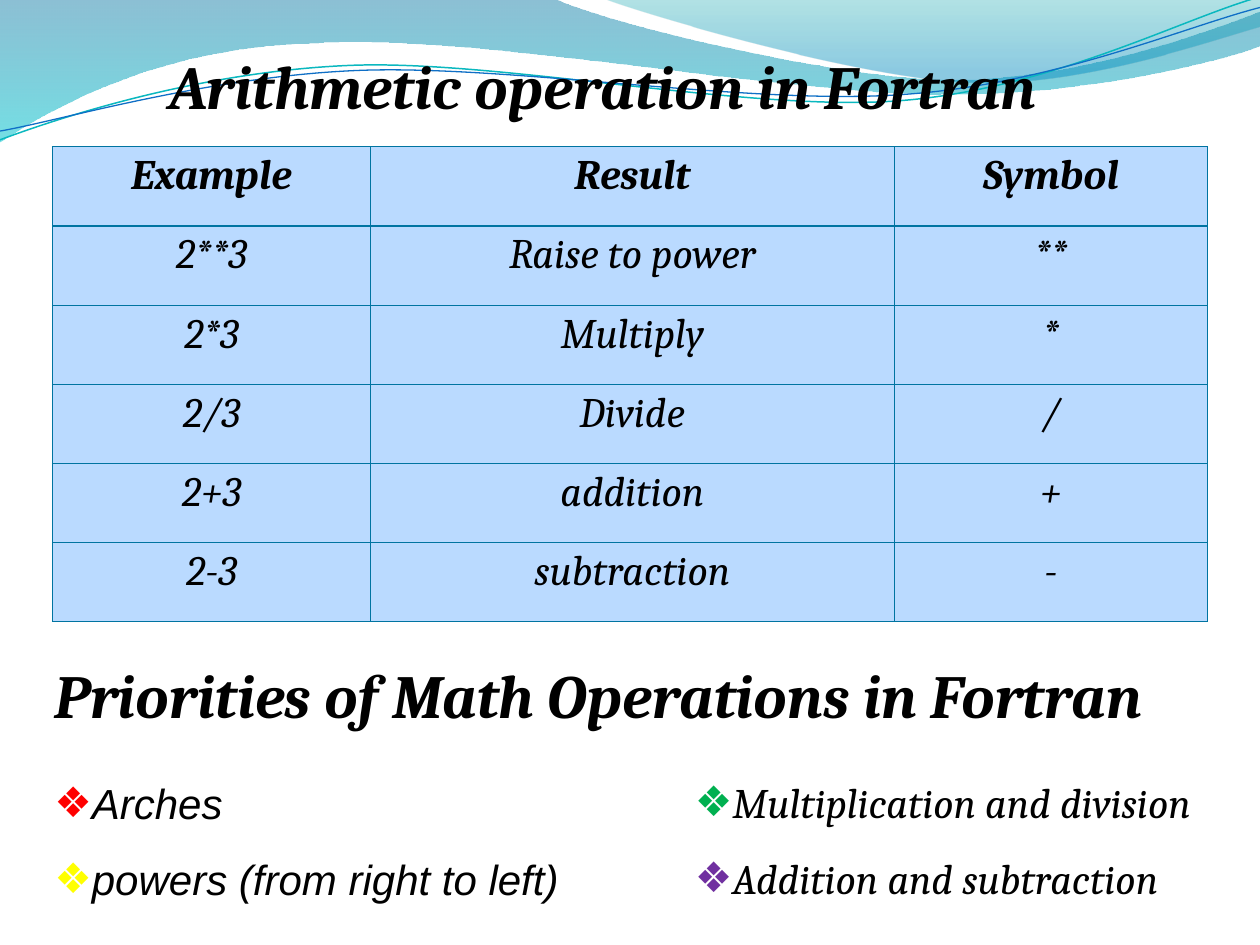
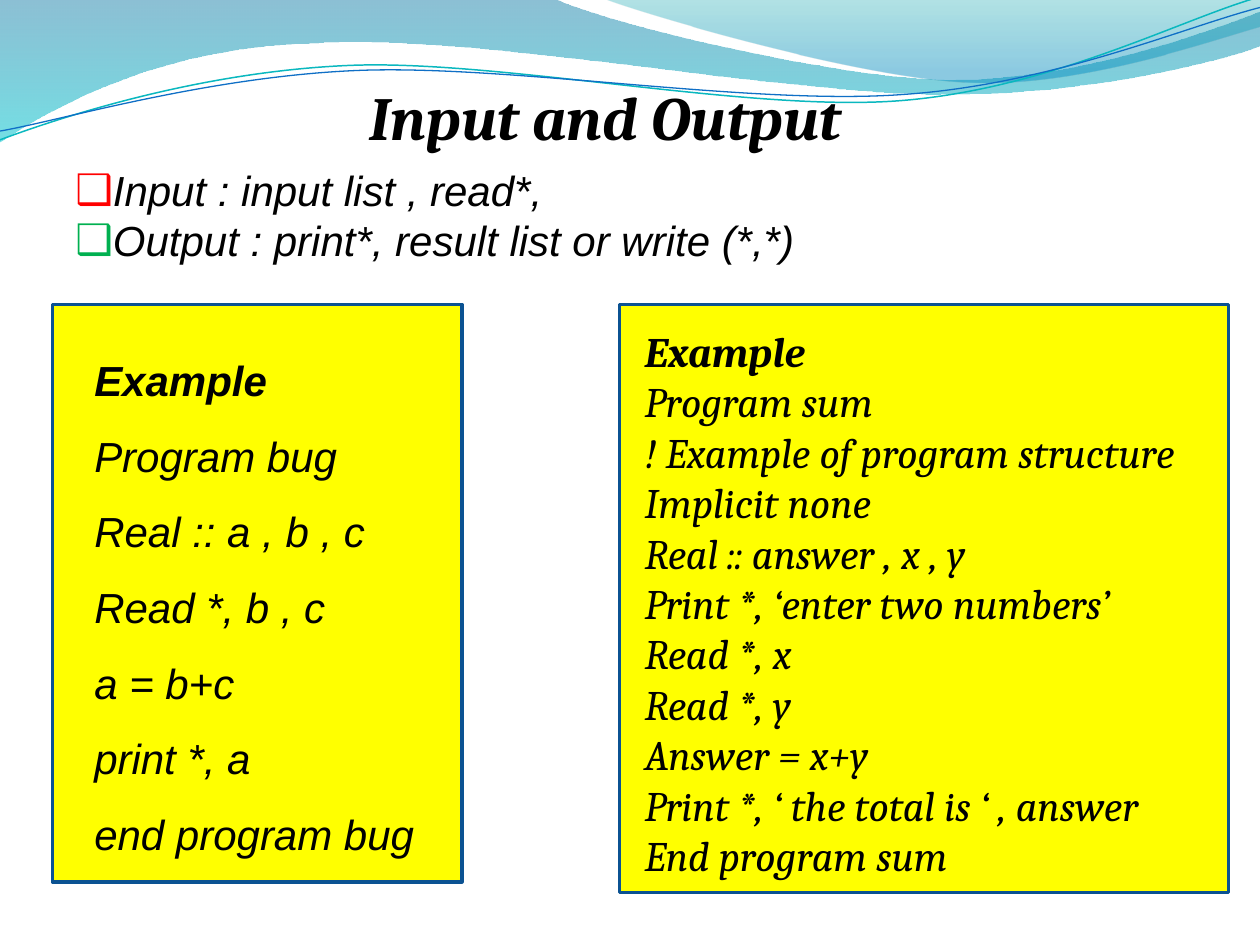
import math

import pptx
import pptx.dml.color
import pptx.enum.shapes
import pptx.enum.text
import pptx.oxml
import pptx.oxml.ns
import pptx.util
from lxml import etree

Pt = pptx.util.Pt
qn = pptx.oxml.ns.qn
ANCHOR = pptx.enum.text.MSO_ANCHOR

# Shared look
BLACK, YELLOW, RED, GREEN, PURPLE = "000000", "FFFF00", "FF0000", "00B050", "7030A0"
CELL_FILL, GRID_LINE, PANEL_LINE = "BADAFF", "0074A1", "0B5292"
SERIF, SANS = "Cambria", "Arial"
TITLE_SIZE, BODY_SIZE = 35, 24
LINE_TILT = -2.7

# Header outlines: a pair is a straight segment, a triple of pairs is a curve
WIDE_BAND = [
    (0, 0), (316.8, -0.7),
    ((342.7, 12.2), (478.1, 45.4), (545.8, 45.4)),
    ((614.2, 45.4), (689.8, 18.7), (720, 6.5)),
    (720.7, 25.9),
    ((707.8, 31.7), (626.4, 54.7), (537.1, 54)),
    ((447.8, 54), (275, 20.2), (185, 24.5)),
    ((92.9, 25.9), (33.1, 59.8), (-0.7, 81.4)),
    (0, 0),
]
RIGHT_BAND = [
    (344.9, -0.7),
    ((366.5, 7.9), (491, 44.6), (553.7, 46.8)),
    ((616.3, 49.7), (691.9, 23), (720, 15.1)),
    (720, 0), (344.9, -0.7),
]
TEAL_LINE = [
    (0, 79.9),
    ((34.6, 67), (113.8, 41), (199.4, 37.4)),
    ((284.4, 33.8), (427, 64.1), (513.4, 57.6)),
    ((599.8, 51.1), (675.4, 10.8), (718.6, -1.4)),
]
BLUE_LINE = [
    (0, 74.9),
    ((33.8, 69.1), (118.1, 43.9), (203.8, 40.3)),
    ((290.2, 36.7), (429.8, 60.5), (516.2, 54)),
    ((601.9, 48.2), (677.5, 15.1), (720, 4.3)),
]
# Outline and gradient stops (position, colour, opacity in percent)
BANDS = [
    (WIDE_BAND, [(0, "0074A1", 45), (1, "00C6CF", 55)]),
    (RIGHT_BAND, [(0, "00A1A9", 30), (0.8, "008BBF", 45)]),
]
# Outline, centre of its tilted box, colour and width
LINES = [
    (TEAL_LINE, (359.3, 41.4), "0AB8BF", 0.85),
    (BLUE_LINE, (359.6, 42.5), "0F6FC6", 0.75),
]

OPERATIONS = [
    ("Example", "Result", "Symbol"),
    ("2**3", "Raise to power", "**"),
    ("2*3", "Multiply", "*"),
    ("2/3", "Divide", "/"),
    ("2+3", "addition", "+"),
    ("2-3", "subtraction", "-"),
]
BUG_PROGRAM = [
    "Example", "Program bug", "Real :: a , b , c", "Read *, b , c",
    "a = b+c", "print *, a", "end program bug",
]
SUM_PROGRAM = [
    "Example", "Program sum", "! Example of program structure", "Implicit none",
    "Real :: answer , x , y", "Print *, ‘enter two numbers’", "Read *, x", "Read *, y",
    "Answer = x+y", "Print *, ‘ the total is ‘ , answer", "End program sum",
]


def color(value):
    return pptx.dml.color.RGBColor.from_string(value)


def style(para, font, size=BODY_SIZE, bold=False):
    para.font.name = font
    para.font.size = Pt(size)
    para.font.bold = bold
    para.font.italic = True
    para.font.color.rgb = color(BLACK)


# Header waves
def turn(point, center, degrees):
    angle = math.radians(degrees)
    across, down = point[0] - center[0], point[1] - center[1]
    return (center[0] + across * math.cos(angle) - down * math.sin(angle),
            center[1] + across * math.sin(angle) + down * math.cos(angle))


def add_outline(page, outline, center=(0, 0), tilt=0):
    segments = [part if len(part) == 3 else (part,) for part in outline]
    points = [turn(point, center, -tilt) for segment in segments for point in segment]
    points = [(Pt(x), Pt(y)) for x, y in points]
    builder = page.shapes.build_freeform(*points[0])
    builder.add_line_segments(points[1:], close=outline[0] == outline[-1])
    shape = builder.convert_to_shape()
    shape.shadow.inherit = False
    shape.rotation = tilt
    # Join each three control points into one curve
    steps = iter(list(shape.element.iter(qn("a:lnTo"))))
    for segment in segments[1:]:
        corners = [next(steps) for _ in segment]
        if len(corners) == 3:
            curve = etree.Element(qn("a:cubicBezTo"))
            corners[0].addprevious(curve)
            for corner in corners:
                curve.append(corner[0])
                corner.getparent().remove(corner)
    return shape


def add_waves(page):
    for outline, stops in BANDS:
        band = add_outline(page, outline)
        band.line.fill.background()
        band.fill.gradient()
        band.fill.gradient_angle = 270
        for stop, (position, value, _) in zip(band.fill.gradient_stops, stops):
            stop.position = position
            stop.color.rgb = color(value)
        for tint, (_, _, opacity) in zip(band.element.spPr.iter(qn("a:srgbClr")), stops):
            etree.SubElement(tint, qn("a:alpha"), val=str(opacity * 1000))
    for outline, center, value, width in LINES:
        wave = add_outline(page, outline, center, LINE_TILT)
        wave.fill.background()
        wave.line.color.rgb = color(value)
        wave.line.width = Pt(width)


# Text
def add_text(page, box, lines, font, size=BODY_SIZE, spacing=1, bold_first=False,
             anchor=ANCHOR.TOP, wrap=False):
    frame = page.shapes.add_textbox(*map(Pt, box)).text_frame
    frame.word_wrap = wrap
    frame.auto_size = pptx.enum.text.MSO_AUTO_SIZE.SHAPE_TO_FIT_TEXT
    frame.vertical_anchor = anchor
    for index, line in enumerate(lines):
        para = frame.add_paragraph() if index else frame.paragraphs[0]
        para.text = line
        para.line_spacing = float(spacing)
        style(para, font, size, bold_first and index == 0)
    return frame


def add_title(page, box, title):
    add_text(page, box, [title], SERIF, TITLE_SIZE, bold_first=True)


def add_bullets(page, box, symbol, items, font, left=0, **options):
    frame = add_text(page, box, [line for line, _ in items], font, **options)
    for para, (_, value) in zip(frame.paragraphs, items):
        properties = para._p.get_or_add_pPr()
        properties.set("marL", str(Pt(left)))
        properties.set("indent", "0")
        tint = etree.Element(qn("a:buClr"))
        etree.SubElement(tint, qn("a:srgbClr"), val=value)
        typeface = etree.Element(qn("a:buFont"), typeface=SANS)
        mark = etree.Element(qn("a:buChar"), char=symbol)
        # Bullet settings come after the spacing and before the font
        place = properties.find(qn("a:defRPr"))
        for part in (tint, typeface, mark):
            place.addprevious(part)


# Table of operators
def add_borders(cell):
    properties = cell._tc.get_or_add_tcPr()
    for index, side in enumerate(("lnL", "lnR", "lnT", "lnB")):
        border = etree.Element(qn("a:" + side), w=str(Pt(0.75)))
        fill = etree.SubElement(border, qn("a:solidFill"))
        etree.SubElement(fill, qn("a:srgbClr"), val=GRID_LINE)
        properties.insert(index, border)


def add_operations(page, box, column_widths):
    grid = page.shapes.add_table(len(OPERATIONS), len(column_widths), *map(Pt, box)).table
    grid.horz_banding = False
    for column, width in zip(grid.columns, column_widths):
        column.width = Pt(width)
    for row_index, texts in enumerate(OPERATIONS):
        grid.rows[row_index].height = Pt(box[3] / len(OPERATIONS))
        for column_index, text in enumerate(texts):
            cell = grid.cell(row_index, column_index)
            cell.margin_left = cell.margin_right = cell.margin_top = cell.margin_bottom = 0
            cell.vertical_anchor = ANCHOR.MIDDLE
            cell.fill.solid()
            cell.fill.fore_color.rgb = color(CELL_FILL)
            add_borders(cell)
            para = cell.text_frame.paragraphs[0]
            para.text = text
            para.alignment = pptx.enum.text.PP_ALIGN.CENTER
            para.line_spacing = Pt(15.8 if row_index else 16)
            style(para, SERIF, bold=row_index == 0)


# Yellow program panel; text_box is relative to the panel's corner
def add_program(page, box, text_box, lines, font, spacing):
    panel = page.shapes.add_shape(pptx.enum.shapes.MSO_SHAPE.RECTANGLE, *map(Pt, box))
    panel.shadow.inherit = False
    panel.fill.solid()
    panel.fill.fore_color.rgb = color(YELLOW)
    panel.line.color.rgb = color(PANEL_LINE)
    panel.line.width = Pt(2)
    left, top, width, height = text_box
    return add_text(page, (box[0] + left, box[1] + top, width, height), lines, font,
                    spacing=spacing, bold_first=True, anchor=ANCHOR.MIDDLE)


def new_page(deck):
    page = deck.slides.add_slide(deck.slide_layouts[6])
    add_waves(page)
    return page


def build_arithmetic(deck):
    page = new_page(deck)
    add_title(page, (90, 23.8, 550, 49.7), "Arithmetic operation in Fortran")
    add_operations(page, (30, 83.9, 660.2, 271.6), (181.7, 299.3, 179.2))
    add_title(page, (24.2, 372.2, 684, 49.7), "Priorities of Math Operations in Fortran")
    add_bullets(page, (24, 426.2, 312.5, 94.3), "❖",
                [("Arches", RED), ("powers (from right to left)", YELLOW)],
                SANS, spacing=1.5, anchor=ANCHOR.MIDDLE)
    add_bullets(page, (390, 426, 330, 94.3), "❖",
                [("Multiplication and division", GREEN), ("Addition and subtraction", PURPLE)],
                SERIF, spacing=1.5, wrap=True)


def build_input_output(deck):
    page = new_page(deck)
    add_title(page, (204, 42, 316.8, 49.7), "Input and Output")
    add_bullets(page, (0, 90, 472.3, 65.4), "❑",
                [("Input : input list , read*,", RED),
                 ("Output : print*, result list or write (*,*)", GREEN)],
                SANS, left=36, anchor=ANCHOR.MIDDLE)
    add_program(page, (30, 174, 234, 330), (16.8, 11.8, 199.4, 307.4), BUG_PROGRAM, SANS, 1.5)
    frame = add_program(page, (354, 174, 348, 336), (-18.7, 0.1, 373, 330.5),
                        SUM_PROGRAM, SERIF, 1)
    frame.margin_left, frame.margin_top = Pt(33), Pt(10)
    frame.margin_right = frame.margin_bottom = 0


def main():
    deck = pptx.Presentation()
    deck.slide_width, deck.slide_height = Pt(720), Pt(540)
    build_arithmetic(deck)
    build_input_output(deck)
    deck.save("out.pptx")


if __name__ == "__main__":
    main()
